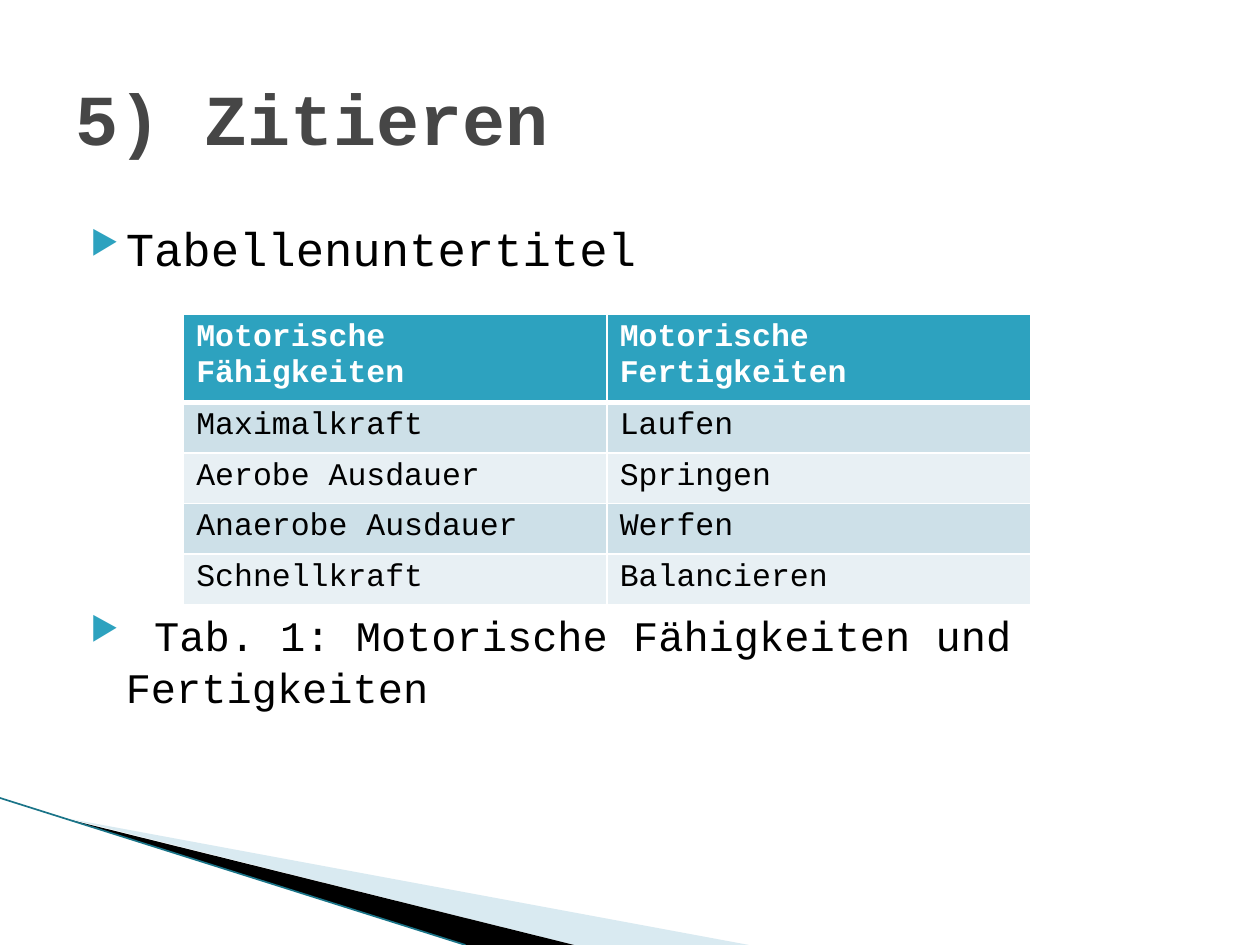
from lxml import etree
from pptx import Presentation
from pptx.dml.color import RGBColor
from pptx.enum import shapes, text
from pptx.oxml.ns import qn
from pptx.util import Pt

FONT = "Courier New"
TEAL, WHITE, BLACK, GREY = "2DA2BF", "FFFFFF", "000000", "464646"
BANDS = ("CDE0E8", "E8F0F4")
ROWS = [
    ("Motorische Fähigkeiten", "Motorische Fertigkeiten"),
    ("Maximalkraft", "Laufen"),
    ("Aerobe Ausdauer", "Springen"),
    ("Anaerobe Ausdauer", "Werfen"),
    ("Schnellkraft", "Balancieren"),
]


def color(value):
    return RGBColor.from_string(value)


def child(parent, tag, **attributes):
    return etree.SubElement(parent, qn(tag), attributes)


def add_run(paragraph, words, size, ink, bold=False):
    run = paragraph.add_run()
    run.text = words
    run.font.name, run.font.size, run.font.bold = FONT, Pt(size), bold
    run.font.color.rgb = color(ink)


def add_frame(slide, box, anchor):
    frame = slide.shapes.add_textbox(*map(Pt, box)).text_frame
    frame.word_wrap = True
    frame.vertical_anchor = anchor
    return frame


def add_bullet(paragraph):
    properties = paragraph._p.get_or_add_pPr()
    properties.set("marL", str(Pt(28.8)))
    properties.set("indent", str(Pt(-20.16)))
    child(child(properties, "a:buClr"), "a:srgbClr", val=TEAL)
    child(properties, "a:buSzPct", val="68000")
    child(properties, "a:buChar", char="▶")


def wedge(slide, points, fill, opacity=100):
    builder = slide.shapes.build_freeform(*points[0], scale=Pt(1))
    builder.add_line_segments(points[1:], close=True)
    shape = builder.convert_to_shape()
    shape.shadow.inherit = False
    shape.fill.solid()
    shape.fill.fore_color.rgb = color(fill)
    shape.line.fill.background()
    if opacity < 100:
        tone = shape._element.spPr.find(qn("a:solidFill"))[0]
        child(tone, "a:alpha", val=str(opacity * 1000))


def corner_decoration(slide, left, top, height):
    bottom = top + height
    # Pale and black wedges
    wedge(slide, [(left + 39.6, top + 12.5), (left + 428, bottom),
                  (left + 328, bottom)], "A0CBDC", 40)
    wedge(slide, [(left + 38.2, top + 11.5), (left + 328, bottom),
                  (left + 266, bottom)], BLACK)
    # Edge line
    edge = slide.shapes.add_connector(
        shapes.MSO_CONNECTOR.STRAIGHT,
        Pt(left), Pt(top), Pt(left + 266), Pt(bottom))
    edge.line.color.rgb = color("1A7488")
    edge.line.width = Pt(0.95)
    child(edge._element.spPr, "a:effectLst")


def title(slide, box):
    frame = add_frame(slide, box, text.MSO_ANCHOR.MIDDLE)
    add_run(frame.paragraphs[0], "5) Zitieren", 41, GREY, True)


def body(slide, box):
    frame = add_frame(slide, box, text.MSO_ANCHOR.TOP)
    heading, caption = frame.paragraphs[0], frame.add_paragraph()
    # The caption sits below the table
    caption.space_before = Pt(188)
    for paragraph in (heading, caption):
        add_bullet(paragraph)
    add_run(heading, "Tabellenuntertitel", 27, BLACK)
    add_run(caption, " ", 27, BLACK)
    add_run(caption, "Tab. 1: Motorische Fähigkeiten und Fertigkeiten", 24, BLACK)


def cell_borders(cell, bottom):
    properties = cell._tc.get_or_add_tcPr()
    widths = {"a:lnL": 1, "a:lnR": 1, "a:lnT": 1, "a:lnB": bottom}
    for position, (tag, width) in enumerate(widths.items()):
        border = etree.Element(qn(tag), w=str(Pt(width)))
        child(child(border, "a:solidFill"), "a:srgbClr", val=WHITE)
        properties.insert(position, border)


def skills_table(slide, left, top, width, header_height, row_height):
    height = header_height + row_height * (len(ROWS) - 1)
    table = slide.shapes.add_table(
        len(ROWS), 2, Pt(left), Pt(top), Pt(width), Pt(height)).table
    for column in table.columns:
        column.width = Pt(width / 2)
    for index, words in enumerate(ROWS):
        header = index == 0
        table.rows[index].height = Pt(header_height if header else row_height)
        for cell, label in zip(table.rows[index].cells, words):
            cell.fill.solid()
            cell.fill.fore_color.rgb = color(TEAL if header else BANDS[(index - 1) % 2])
            cell_borders(cell, 3 if header else 1)
            add_run(cell.text_frame.paragraphs[0], label, 18,
                    WHITE if header else BLACK, header)


def main():
    deck = Presentation()
    deck.slide_width, deck.slide_height = Pt(720), Pt(540)
    slide = deck.slides.add_slide(deck.slide_layouts[6])
    corner_decoration(slide, 0, 456, 84)
    body(slide, (36, 121.5, 648, 352))
    title(slide, (36, 21.6, 648, 90))
    skills_table(slide, 105, 179.5, 484, 48, 28.9)
    deck.save("out.pptx")


if __name__ == "__main__":
    main()
